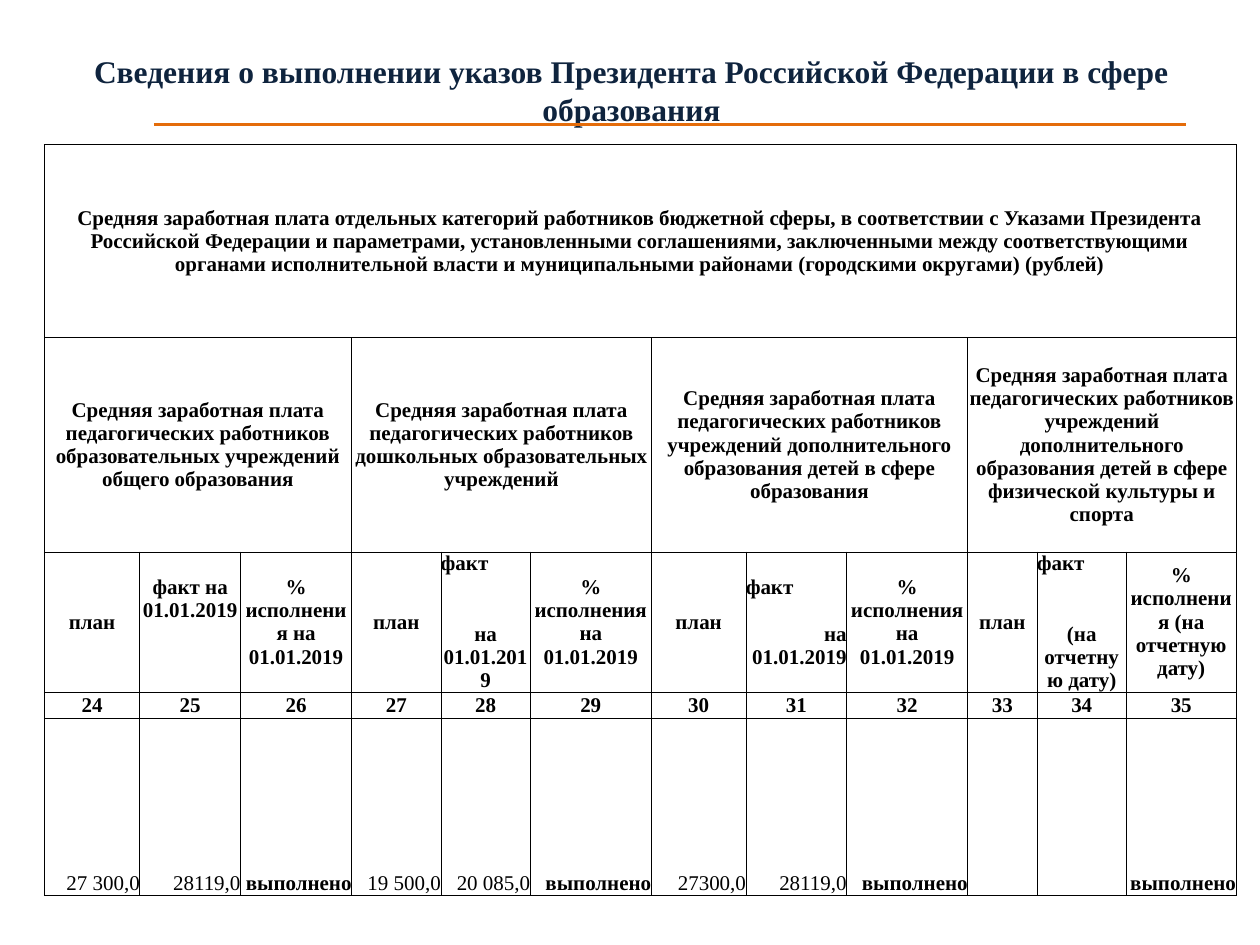
from dataclasses import dataclass

from lxml.etree import SubElement
from pptx import Presentation
from pptx.dml.color import RGBColor
from pptx.enum.shapes import MSO_CONNECTOR
from pptx.enum.text import MSO_ANCHOR, MSO_AUTO_SIZE, PP_ALIGN
from pptx.oxml.ns import qn
from pptx.slide import Slide
from pptx.table import Table, _Cell
from pptx.text.text import _Paragraph
from pptx.util import Cm, Pt

FONT = "Times New Roman"
BLACK = "000000"
LINE_HEIGHT = 13.4
COLUMN_WIDTHS = [1.93, 2.03, 2.24, 1.8, 1.8, 2.44, 1.91, 2.03, 2.44, 1.4, 1.8, 2.21]
ROW_HEIGHTS = [3.89, 4.32, 2.74, 0.53, 3.56]
FIRST_COLUMN_NUMBER = 24
DONE = "выполнено"
TITLE = "Сведения о выполнении указов Президента Российской Федерации в сфере образования"
TABLE_HEADING = (
    "Средняя заработная плата отдельных категорий работников бюджетной сферы, "
    "в соответствии с Указами Президента Российской Федерации и параметрами, "
    "установленными соглашениями, заключенными между соответствующими органами "
    "исполнительной власти и муниципальными районами (городскими округами) (рублей)"
)
GROUP_PREFIX = "Средняя заработная плата педагогических работников "


@dataclass
class Line:
    text: str
    alignment: PP_ALIGN = PP_ALIGN.CENTER
    bold: bool = True
    space_before: float = 0


@dataclass
class StaffGroup:
    institutions: str
    fact: list[Line]
    percent: str
    values: tuple[str, str, str]
    fact_bottom_margin: float = 0


def split_fact(date: str, alignment: PP_ALIGN, blank_lines: int) -> list[Line]:
    return [
        Line("факт", PP_ALIGN.LEFT),
        Line(date, alignment, space_before=blank_lines * LINE_HEIGHT),
    ]


STAFF_GROUPS = [
    StaffGroup(
        "образовательных учреждений общего образования",
        [Line("факт на 01.01.2019")],
        "% исполнения на 01.01.2019",
        ("27 300,0", "28119,0", DONE),
        fact_bottom_margin=0.94,
    ),
    StaffGroup(
        "дошкольных образовательных учреждений",
        split_fact("на 01.01.2019", PP_ALIGN.CENTER, 2),
        "% исполнения на 01.01.2019",
        ("19 500,0", "20 085,0", DONE),
    ),
    StaffGroup(
        "учреждений дополнительного образования детей в сфере образования",
        split_fact("на 01.01.2019", PP_ALIGN.RIGHT, 1),
        "% исполнения на 01.01.2019",
        ("27300,0", "28119,0", DONE),
    ),
    StaffGroup(
        "учреждений дополнительного образования детей в сфере физической культуры и спорта",
        split_fact("(на отчетную дату)", PP_ALIGN.CENTER, 2),
        "% исполнения (на отчетную дату)",
        ("", "", DONE),
    ),
]


def color(hex_value: str) -> RGBColor:
    return RGBColor.from_string(hex_value)


def add_text(paragraph: _Paragraph, text: str, size: float, hex_value: str, bold: bool) -> None:
    run = paragraph.add_run()
    run.text = text
    run.font.name = FONT
    run.font.size = Pt(size)
    run.font.bold = bold
    run.font.color.rgb = color(hex_value)


def add_title(slide: Slide) -> None:
    title = slide.shapes.title
    title.left, title.top, title.width, title.height = Cm(1.3), Cm(1.12), Cm(22.86), Cm(1.37)
    frame = title.text_frame
    frame.word_wrap = True
    frame.auto_size = MSO_AUTO_SIZE.NONE
    frame.vertical_anchor = MSO_ANCHOR.MIDDLE
    paragraph = frame.paragraphs[0]
    paragraph.alignment = PP_ALIGN.CENTER
    add_text(paragraph, TITLE, 18, "0F243E", True)


def add_title_rule(slide: Slide) -> None:
    connector = slide.shapes.add_connector(
        MSO_CONNECTOR.STRAIGHT, Cm(3.1), Cm(2.51), Cm(23.9), Cm(2.51)
    )
    connector.line.color.rgb = color("E46C0A")
    connector.line.width = Pt(1.5)
    SubElement(connector._element.spPr, qn("a:effectLst"))


def format_cell(cell: _Cell) -> None:
    cell.margin_left = cell.margin_right = cell.margin_top = cell.margin_bottom = 0
    properties = cell._tc.get_or_add_tcPr()
    for side in ("lnL", "lnR", "lnT", "lnB"):
        border = SubElement(properties, qn(f"a:{side}"), w=str(Pt(0.5)))
        fill = SubElement(border, qn("a:solidFill"))
        SubElement(fill, qn("a:srgbClr"), val=BLACK)
    cell.fill.background()


def write_cell(cell: _Cell, lines: list[Line], anchor: MSO_ANCHOR = MSO_ANCHOR.MIDDLE) -> None:
    cell.vertical_anchor = anchor
    frame = cell.text_frame
    for index, line in enumerate(lines):
        paragraph = frame.add_paragraph() if index else frame.paragraphs[0]
        paragraph.alignment = line.alignment
        if line.space_before:
            paragraph.space_before = Pt(line.space_before)
        add_text(paragraph, line.text, 12, BLACK, line.bold)


def fill_group(table: Table, first_column: int, group: StaffGroup) -> None:
    heading = table.cell(1, first_column)
    heading.merge(table.cell(1, first_column + 2))
    write_cell(heading, [Line(GROUP_PREFIX + group.institutions)])

    labels = ([Line("план")], group.fact, [Line(group.percent)])
    for offset, (label, value) in enumerate(zip(labels, group.values)):
        column = first_column + offset
        write_cell(table.cell(2, column), label)
        write_cell(table.cell(3, column), [Line(str(FIRST_COLUMN_NUMBER + column))])
        if value:
            result = Line(value, PP_ALIGN.RIGHT, value == DONE)
            write_cell(table.cell(4, column), [result], MSO_ANCHOR.BOTTOM)
    table.cell(2, first_column + 1).margin_bottom = Cm(group.fact_bottom_margin)


def add_salary_table(slide: Slide) -> None:
    table = slide.shapes.add_table(
        len(ROW_HEIGHTS), len(COLUMN_WIDTHS), Cm(0.89), Cm(2.92),
        Cm(sum(COLUMN_WIDTHS)), Cm(sum(ROW_HEIGHTS)),
    ).table
    table.first_row = False
    table.horz_banding = False
    for column, width in zip(table.columns, COLUMN_WIDTHS):
        column.width = Cm(width)
    for row, height in zip(table.rows, ROW_HEIGHTS):
        row.height = Cm(height)
    for cell in table.iter_cells():
        format_cell(cell)

    heading = table.cell(0, 0)
    heading.merge(table.cell(0, len(COLUMN_WIDTHS) - 1))
    write_cell(heading, [Line(TABLE_HEADING)])
    for index, group in enumerate(STAFF_GROUPS):
        fill_group(table, index * 3, group)


def main() -> None:
    presentation = Presentation()
    presentation.slide_width = Cm(25.4)
    presentation.slide_height = Cm(19.05)
    slide = presentation.slides.add_slide(presentation.slide_layouts[5])
    add_title(slide)
    add_title_rule(slide)
    add_salary_table(slide)
    presentation.save("out.pptx")


if __name__ == "__main__":
    main()
